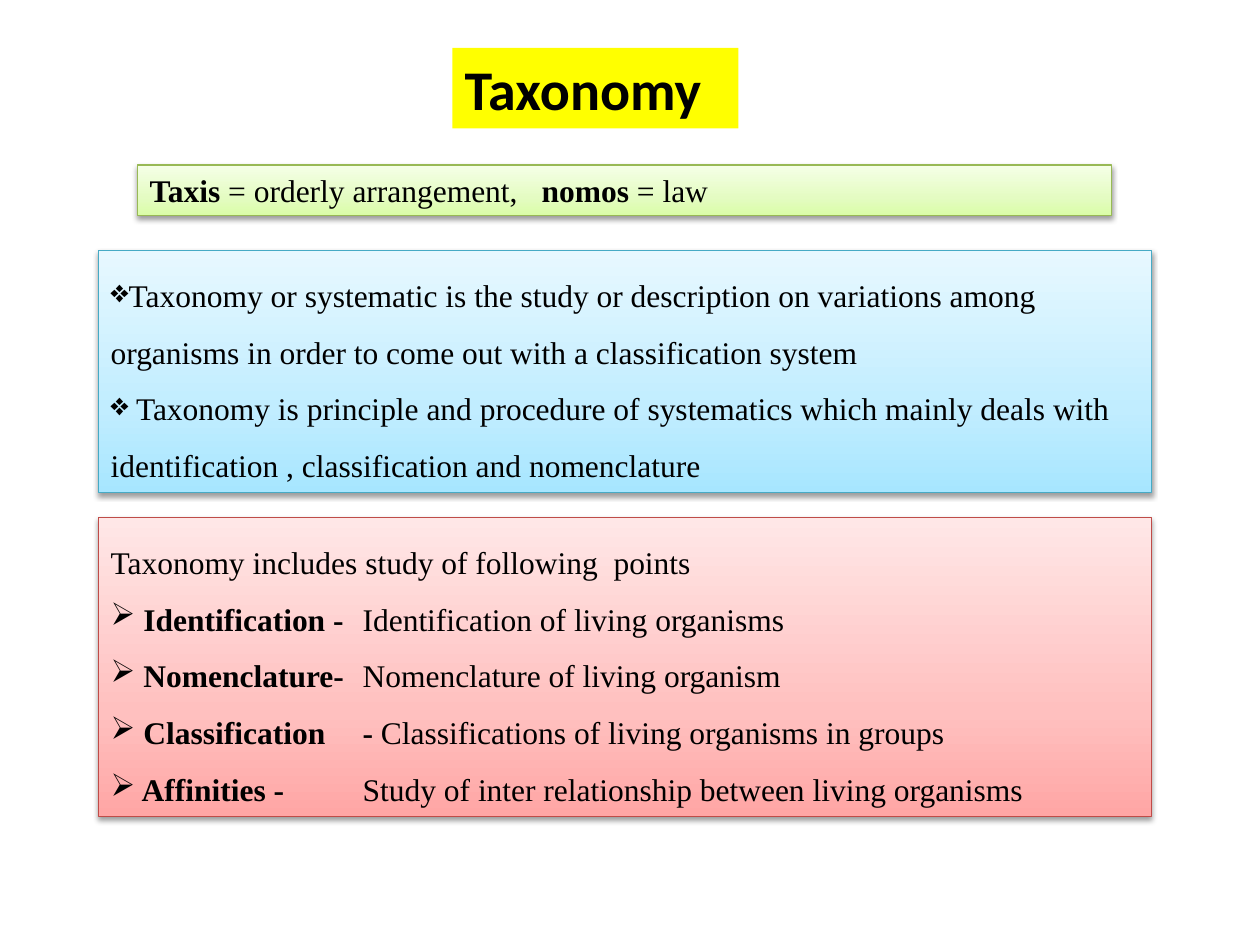
from lxml import etree
from pptx import Presentation
from pptx.dml.color import RGBColor
from pptx.enum import text
from pptx.oxml import parse_xml
from pptx.oxml.ns import nsdecls, qn
from pptx.util import Inches, Pt

BLACK = RGBColor(0, 0, 0)
YELLOW = RGBColor(0xFF, 0xFF, 0)
GREEN = RGBColor(0x98, 0xB9, 0x55)
BLUE = RGBColor(0x46, 0xAA, 0xC5)
RED = RGBColor(0xBF, 0x4C, 0x48)
# Gradient stops run from the bottom edge to the top edge
GREENS = RGBColor(0xDA, 0xFD, 0xA7), RGBColor(0xE4, 0xFC, 0xC2), RGBColor(0xF5, 0xFF, 0xE7)
BLUES = RGBColor(0xA7, 0xE6, 0xFF), RGBColor(0xC1, 0xED, 0xFF), RGBColor(0xE7, 0xF8, 0xFF)
REDS = RGBColor(0xFF, 0xA6, 0xA5), RGBColor(0xFF, 0xC0, 0xBF), RGBColor(0xFF, 0xE7, 0xE7)

FACTS = [
    "Taxonomy or systematic is the study or description on variations among "
    "organisms in order to come out with a classification system",
    " Taxonomy is principle and procedure of systematics which mainly deals with "
    "identification , classification and nomenclature",
]
POINTS = [
    (" Identification -\t", "Identification of living organisms"),
    (" Nomenclature-\t", "Nomenclature of living organism"),
    (" Classification\t- ", "Classifications of living organisms in groups"),
    (" Affinities -\t", "Study of inter relationship between living organisms"),
]


def add_box(slide, left, top, width, height):
    box = slide.shapes.add_textbox(Inches(left), Inches(top), Inches(width), Inches(height))
    box.text_frame.word_wrap = True
    box.text_frame.auto_size = text.MSO_AUTO_SIZE.SHAPE_TO_FIT_TEXT
    return box


def add_panel(slide, place, edge, shades):
    """Add an outlined box with a vertical gradient and a soft shadow."""
    box = add_box(slide, *place)
    box.line.color.rgb = edge
    box.line.width = Pt(0.75)
    stops = "".join(
        f'<a:gs pos="{pos}000"><a:srgbClr val="{shade}"/></a:gs>'
        for pos, shade in zip((0, 35, 100), shades)
    )
    grad = parse_xml(
        f'<a:gradFill {nsdecls("a")} rotWithShape="1"><a:gsLst>{stops}</a:gsLst>'
        '<a:lin ang="16200000" scaled="1"/></a:gradFill>'
    )
    props = box.fill._xPr
    props.replace(props.find(qn("a:noFill")), grad)
    props.append(parse_xml(
        f'<a:effectLst {nsdecls("a")}><a:outerShdw blurRad="{Pt(3.1)}" dist="{Pt(1.6)}" '
        'dir="5400000" rotWithShape="0"><a:srgbClr val="000000"><a:alpha val="38000"/>'
        '</a:srgbClr></a:outerShdw></a:effectLst>'
    ))
    return box.text_frame


def style(para, size=18, face="Times New Roman"):
    para.font.size = Pt(size)
    para.font.name = face
    para.font.color.rgb = BLACK


def add_text(para, *parts):
    """Write runs that alternate between bold and regular."""
    style(para)
    for i, part in enumerate(parts):
        run = para.add_run()
        run.text = part
        run.font.bold = i % 2 == 0


def add_tab(para, pos):
    tabs = etree.SubElement(para._p.get_or_add_pPr(), qn("a:tabLst"))
    etree.SubElement(tabs, qn("a:tab"), pos=str(Inches(pos)), algn="l")


def add_bullet(para, mark):
    etree.SubElement(para._p.get_or_add_pPr(), qn("a:buChar"), char=mark)
    para.line_spacing = 1.5


def add_title(slide):
    box = add_box(slide, 3.59, 0.38, 2.27, 0.64)
    box.fill.solid()
    box.fill.fore_color.rgb = YELLOW
    para = box.text_frame.paragraphs[0]
    para.text = "Taxonomy"
    style(para, 32, "Calibri")
    para.font.bold = True


def add_roots(slide):
    para = add_panel(slide, (1.09, 1.31, 7.73, 0.4), GREEN, GREENS).paragraphs[0]
    add_tab(para, 3.11)
    add_text(para, "Taxis ", "= orderly arrangement,\t", "nomos ", "= law")


def add_facts(slide):
    frame = add_panel(slide, (0.78, 1.99, 8.36, 1.92), BLUE, BLUES)
    for i, fact in enumerate(FACTS):
        para = frame.add_paragraph() if i else frame.paragraphs[0]
        para.text = fact
        style(para)
        add_bullet(para, "❖")


def add_points(slide):
    frame = add_panel(slide, (0.78, 4.11, 8.36, 2.37), RED, REDS)
    head = frame.paragraphs[0]
    head.text = "Taxonomy includes study of following  points"
    head.line_spacing = 1.5
    style(head)
    for point in POINTS:
        para = frame.add_paragraph()
        add_bullet(para, "➢")
        add_tab(para, 2)
        add_text(para, *point)


def main():
    deck = Presentation()
    deck.slide_width, deck.slide_height = Inches(10), Inches(7.5)
    slide = deck.slides.add_slide(deck.slide_layouts[6])
    add_roots(slide)
    add_title(slide)
    add_facts(slide)
    add_points(slide)
    deck.save("out.pptx")


if __name__ == "__main__":
    main()
